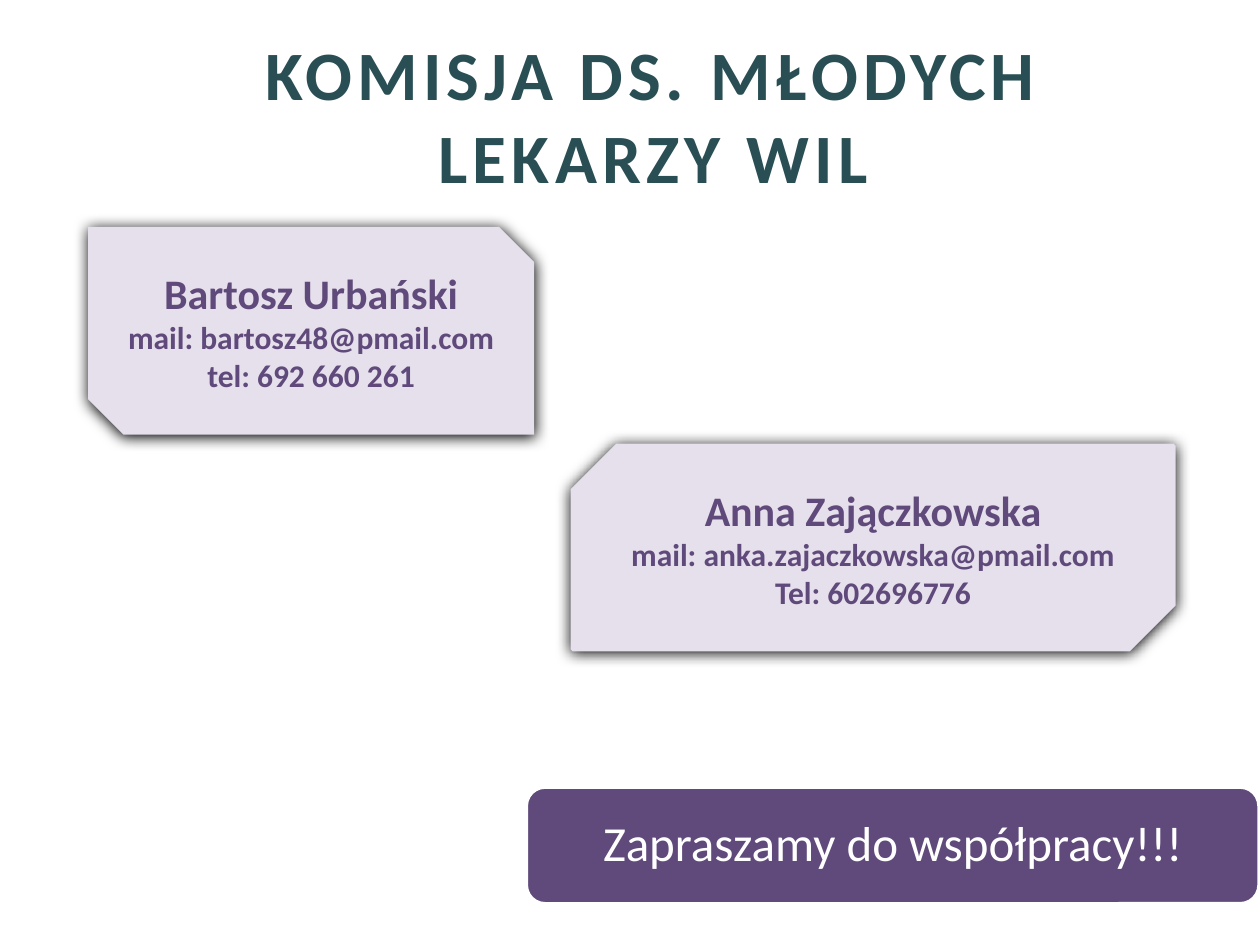
from lxml import etree
from pptx import Presentation
from pptx.dml.color import RGBColor
from pptx.enum.shapes import MSO_SHAPE
from pptx.enum.text import MSO_ANCHOR, PP_ALIGN
from pptx.oxml.ns import qn
from pptx.util import Inches, Pt

SNIPPED = MSO_SHAPE.SNIP_2_DIAG_RECTANGLE
ROUNDED = MSO_SHAPE.ROUNDED_RECTANGLE
MIDDLE = MSO_ANCHOR.MIDDLE
CENTER = PP_ALIGN.CENTER

COLORS = {"title": "294F55", "purple": "604A7B", "lilac": "E6E0EC",
          "white": "FFFFFF", "shadow": "000000"}
FONT = "Calibri"
COLS, ROWS = 100, 75


def rgb(name):
    return RGBColor.from_string(COLORS[name])


class ContactSlide:
    """Places elements on a grid of COLS by ROWS cells."""

    def __init__(self, prs):
        self.col = prs.slide_width / COLS
        self.row = prs.slide_height / ROWS
        self.s = prs.slides.add_slide(prs.slide_layouts[6])

    def box(self, x, y, w, h):
        return [round(v) for v in (x * self.col, y * self.row, w * self.col, h * self.row)]

    def add_lines(self, sp, lines, color, bold=False, spacing=None):
        """Fill a shape with centred lines given as (text, size) pairs."""
        tf = sp.text_frame
        tf.word_wrap = True
        tf.vertical_anchor = MIDDLE
        for i, (text, size) in enumerate(lines):
            p = tf.paragraphs[0] if i == 0 else tf.add_paragraph()
            p.alignment = CENTER
            p.line_spacing = spacing
            r = p.add_run()
            r.text = text
            r.font.name = FONT
            r.font.size = Pt(size)
            r.font.bold = bold
            r.font.color.rgb = rgb(color)
        return tf

    def shape(self, kind, place, fill):
        sp = self.s.shapes.add_shape(kind, *self.box(*place))
        sp.shadow.inherit = False
        sp.fill.solid()
        sp.fill.fore_color.rgb = rgb(fill)
        sp.line.fill.background()
        return sp

    def drop_shadow(self, sp):
        effects = sp._element.spPr.find(qn("a:effectLst"))
        shadow = etree.SubElement(effects, qn("a:outerShdw"), blurRad=str(Pt(8.5)),
                                  dist=str(Pt(1)), dir="5400000", algn="ctr",
                                  rotWithShape="0")
        etree.SubElement(shadow, qn("a:srgbClr"), val=COLORS["shadow"])

    def title(self, text, place):
        sp = self.s.shapes.add_textbox(*self.box(*place))
        tf = self.add_lines(sp, [(text, 39.6)], "title", bold=True)
        tf.paragraphs[0].runs[0]._r.get_or_add_rPr().set("spc", "300")

    def banner(self, text, place):
        sp = self.shape(ROUNDED, place, "purple")
        sp.line.color.rgb = rgb("white")
        sp.line.width = Pt(3)
        self.add_lines(sp, [(text, 28)], "white", spacing=0.9)

    def card(self, name, mail, phone, place, snips):
        sp = self.shape(SNIPPED, place, "lilac")
        for i, snip in enumerate(snips):
            sp.adjustments[i] = snip
        self.drop_shadow(sp)
        self.add_lines(sp, [(name, 24), (mail, 18), (phone, 18)], "purple", bold=True)


def main():
    prs = Presentation()
    prs.slide_width, prs.slide_height = Inches(10), Inches(7.5)
    slide = ContactSlide(prs)
    slide.banner("Zapraszamy do współpracy!!!", (41.7, 62.4, 58.3, 9.4))
    slide.card("Bartosz Urbański", "mail: bartosz48@pmail.com", "tel: 692 660 261",
               (7, 18, 35.4, 16.5), (0, 0.17))
    slide.card("Anna Zajączkowska", "mail: anka.zajaczkowska@pmail.com", "Tel: 602696776",
               (45.3, 35.2, 48, 16.5), (0.22, 0.01))
    slide.title("KOMISJA DS. MŁODYCH LEKARZY WIL", (12.5, 3.9, 78.7, 10.4))
    prs.save("out.pptx")


if __name__ == "__main__":
    main()
